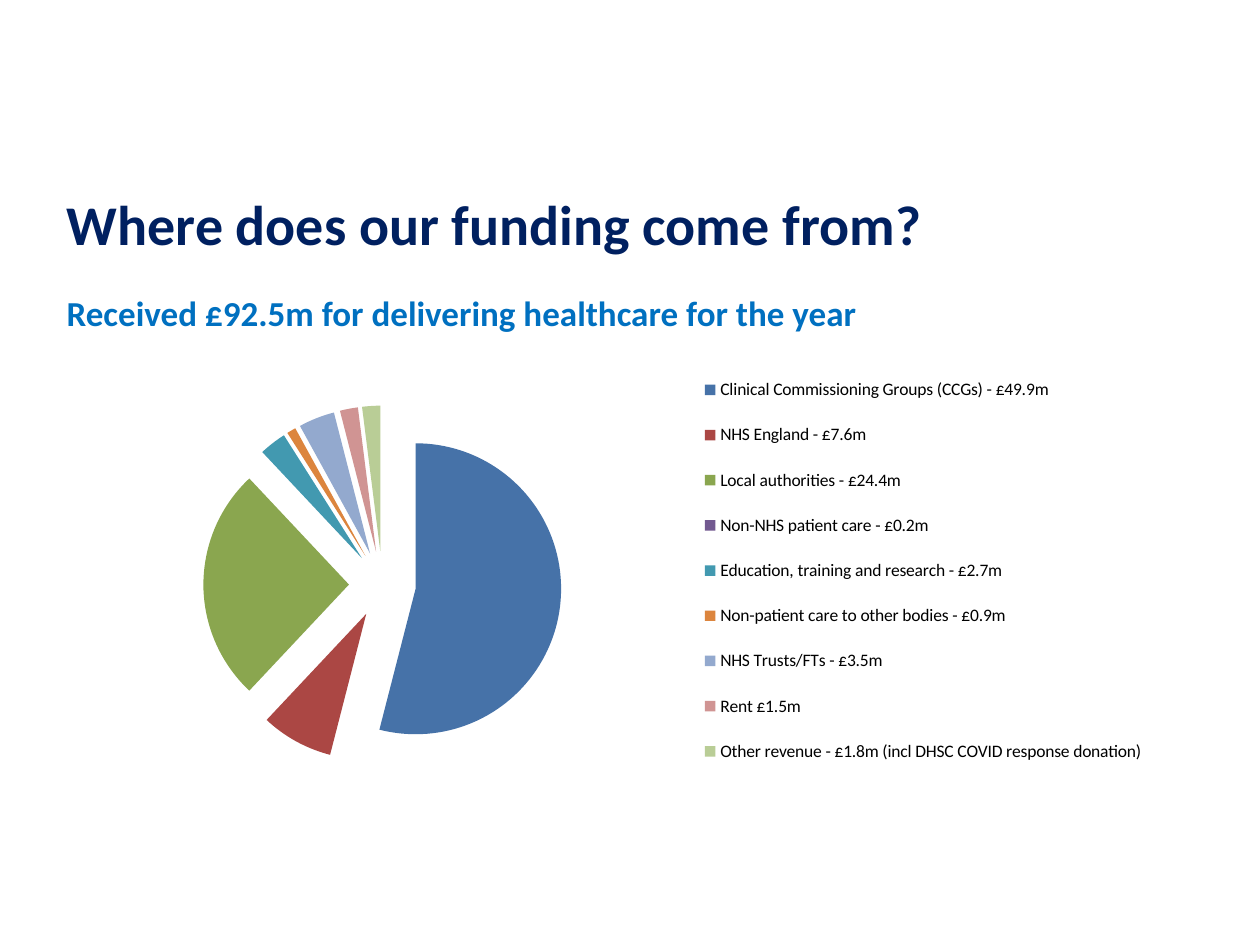
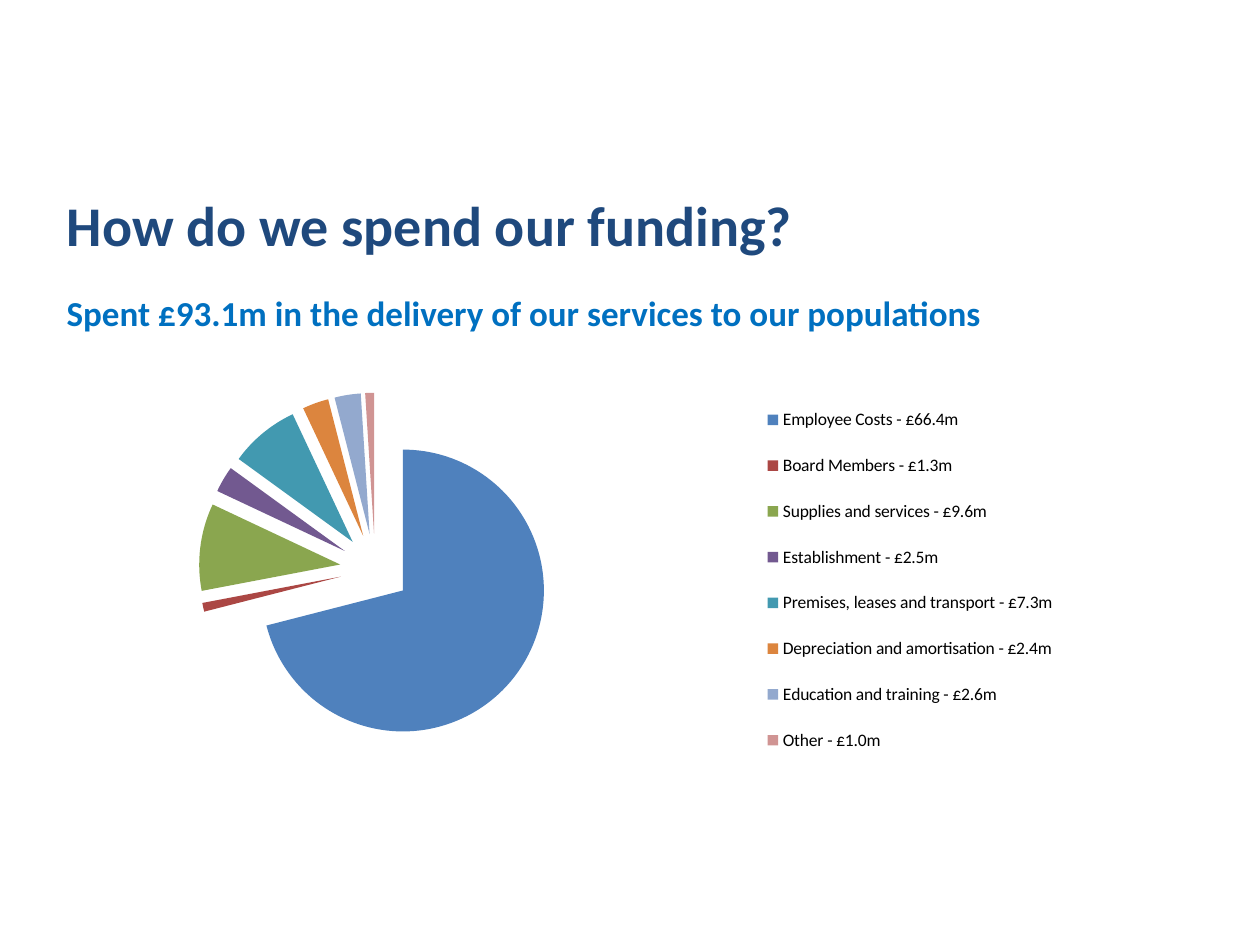
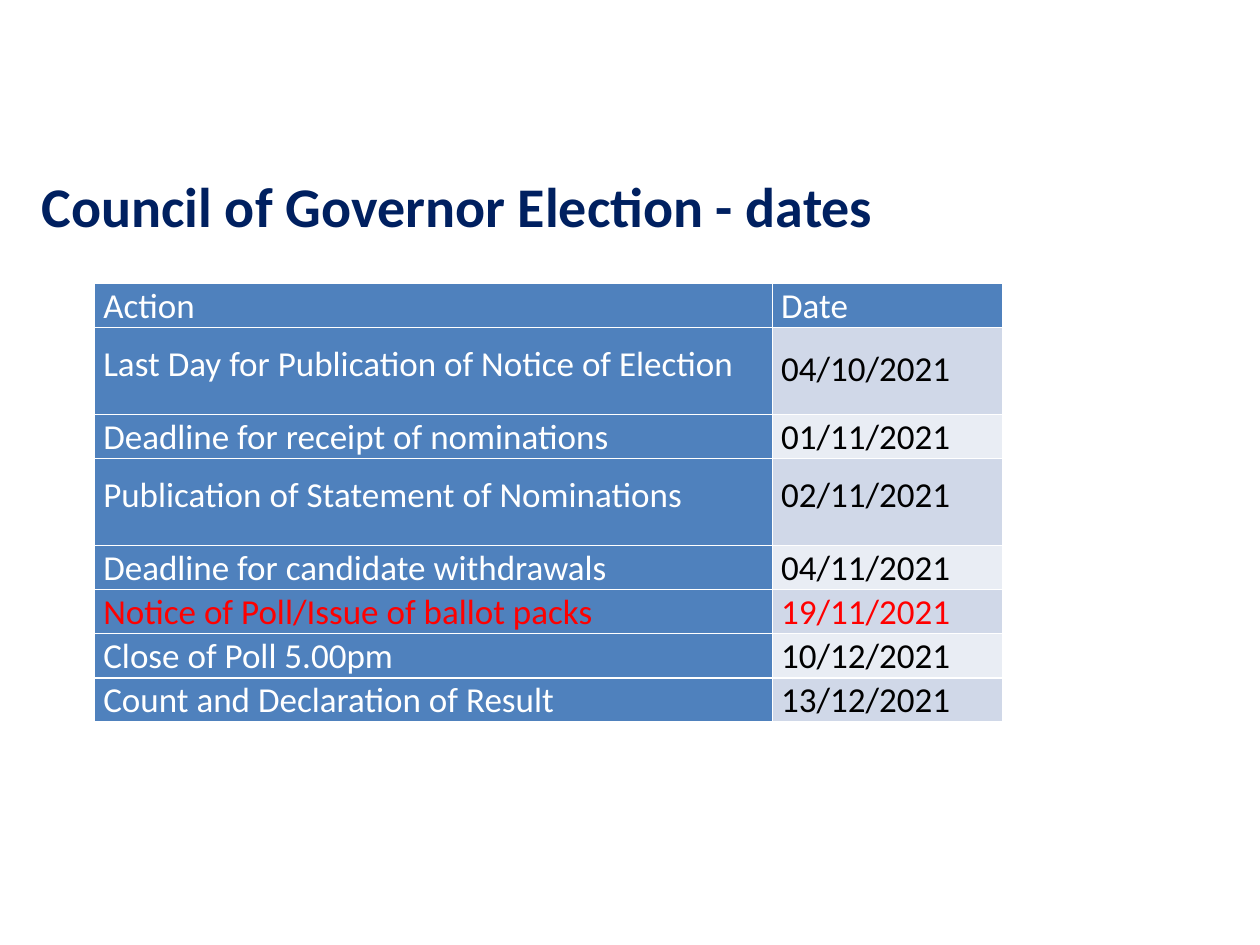
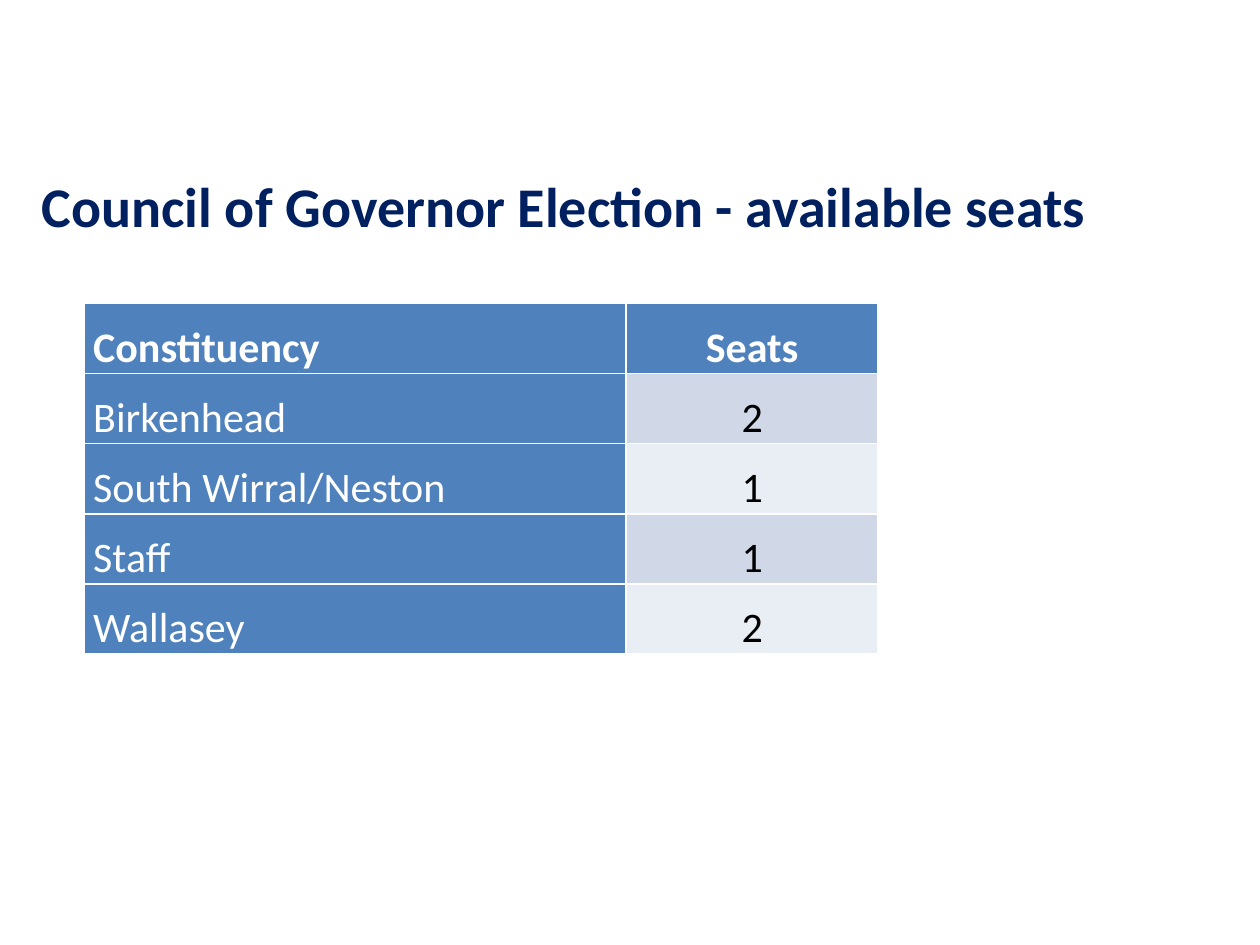
import pptx
import pptx.chart.data
import pptx.dml.color
import pptx.enum.chart
import pptx.enum.text
import pptx.oxml
import pptx.oxml.ns
import pptx.util
from dataclasses import dataclass

Inches = pptx.util.Inches
Pt = pptx.util.Pt
PP_ALIGN = pptx.enum.text.PP_ALIGN
MSO_ANCHOR = pptx.enum.text.MSO_ANCHOR


@dataclass(frozen=True)
class Theme:
    font: str = "Calibri"
    navy: str = "002060"
    slate: str = "1F497D"
    sky: str = "0070C0"
    blue: str = "4F81BD"
    band_dark: str = "D0D8E8"
    band_light: str = "E9EDF4"
    white: str = "FFFFFF"
    black: str = "000000"
    red: str = "FF0000"
    slices: tuple = ("4672A8", "AB4744", "8AA64F", "725990", "4299B0",
                     "DC853E", "93A9CE", "D09493", "B9CD96")
    title_size: int = 32
    subtitle_size: int = 20
    legend_size: int = 10


T = Theme()


def rgb(value):
    return pptx.dml.color.RGBColor.from_string(value)


def style_font(font, size, color, bold=False):
    font.name, font.size, font.bold = T.font, Pt(size), bold
    font.color.rgb = rgb(color)


def write(tf, text, size, color, bold=False, align=PP_ALIGN.LEFT, spacing=1.0):
    p = tf.paragraphs[0]
    p.text, p.alignment, p.line_spacing = text, align, spacing
    style_font(p.font, size, color, bold)


# Title and subtitle
def add_title(s, text, box, color=T.navy):
    sp = s.shapes.title
    sp.left, sp.top, sp.width, sp.height = map(Inches, box)
    tf = sp.text_frame
    tf.word_wrap = True
    tf.auto_size = pptx.enum.text.MSO_AUTO_SIZE.NONE
    tf.vertical_anchor = MSO_ANCHOR.TOP
    write(tf, text, T.title_size, color, bold=True)


def add_subtitle(s, text, box):
    tf = s.shapes.add_textbox(*map(Inches, box)).text_frame
    tf.word_wrap = True
    write(tf, text, T.subtitle_size, T.sky, bold=True, spacing=1.5)


# Exploded pie with a legend on the right
def set_layout(parent, index, area, inner=False):
    for old in parent.findall(pptx.oxml.ns.qn("c:layout")):
        parent.remove(old)
    target = '<c:layoutTarget val="inner"/>' if inner else ""
    modes = '<c:xMode val="edge"/><c:yMode val="edge"/>'
    sizes = "".join(f'<c:{k} val="{v}"/>' for k, v in zip("xywh", area))
    parent.insert(index, pptx.oxml.parse_xml(
        f'<c:layout {pptx.oxml.ns.nsdecls("c")}><c:manualLayout>'
        f'{target}{modes}{sizes}</c:manualLayout></c:layout>'))


def add_pie(s, box, shares, colors, explosion, plot_area, legend_area):
    data = pptx.chart.data.CategoryChartData()
    data.categories = list(shares)
    data.add_series("Series 1", list(shares.values()))
    chart = s.shapes.add_chart(pptx.enum.chart.XL_CHART_TYPE.PIE,
                               *map(Inches, box), data).chart
    chart.has_title = False
    style_font(chart.font, T.legend_size, T.black)

    chart.has_legend = True
    legend = chart.legend
    legend.position = pptx.enum.chart.XL_LEGEND_POSITION.RIGHT
    legend.include_in_layout = False
    set_layout(legend._element, 1, legend_area)
    set_layout(chart._chartSpace.chart.plotArea, 0, plot_area, inner=True)

    plot = chart.plots[0]
    plot.vary_by_categories = True
    series = plot.series[0]
    for i in range(len(shares)):
        fill = series.points[i].format.fill
        fill.solid()
        fill.fore_color.rgb = rgb(colors[i])
    series._element.find(pptx.oxml.ns.qn("c:tx")).addnext(pptx.oxml.parse_xml(
        f'<c:explosion {pptx.oxml.ns.nsdecls("c")} val="{explosion}"/>'))


def pie_slide(s, title, title_box, color, subtitle, subtitle_box, **pie):
    add_title(s, title, title_box, color)
    add_subtitle(s, subtitle, subtitle_box)
    add_pie(s, **pie)


# Two-column table with a blue first column and banded second column
def set_borders(cell):
    tcPr = cell._tc.get_or_add_tcPr()
    for side in "LRTB":
        tcPr.append(pptx.oxml.parse_xml(
            f'<a:ln{side} {pptx.oxml.ns.nsdecls("a")} w="{Pt(1)}">'
            f'<a:solidFill><a:srgbClr val="{T.white}"/></a:solidFill>'
            f'</a:ln{side}>'))


def add_table(s, origin, cols, heights, rows, size, bold_header=False,
              align=PP_ALIGN.LEFT, spacing=1.0, red_row=None, lifts=None):
    lifts = lifts or {}
    box = (*origin, sum(cols), sum(heights))
    table = s.shapes.add_table(len(rows), len(cols), *map(Inches, box)).table
    table.first_row = table.horz_banding = False
    for column, width in zip(table.columns, cols):
        column.width = Inches(width)
    for r, (values, height) in enumerate(zip(rows, heights)):
        table.rows[r].height = Inches(height)
        for c, text in enumerate(values):
            cell = table.cell(r, c)
            set_borders(cell)
            blue = r == 0 or c == 0
            band = T.band_dark if r % 2 else T.band_light
            cell.fill.solid()
            cell.fill.fore_color.rgb = rgb(T.blue if blue else band)
            cell.margin_left = cell.margin_right = Inches(0.07)
            cell.margin_top = 0
            cell.margin_bottom = Inches(lifts.get((r, c), 0))
            cell.vertical_anchor = MSO_ANCHOR.BOTTOM
            color = T.white if blue else T.black
            write(cell.text_frame, text, size,
                  T.red if r == red_row else color,
                  bold=bold_header and r == 0,
                  align=align if c else PP_ALIGN.LEFT, spacing=spacing)


def table_slide(s, title, title_box, **table):
    add_title(s, title, title_box)
    add_table(s, **table)


# Content: shares are whole percentages of the year's total
FUNDING = {
    "Clinical Commissioning Groups (CCGs) - £49.9m": 54,
    "NHS England - £7.6m": 8,
    "Local authorities - £24.4m": 26,
    "Non-NHS patient care - £0.2m": 0,
    "Education, training and research - £2.7m": 3,
    "Non-patient care to other bodies - £0.9m": 1,
    "NHS Trusts/FTs - £3.5m": 4,
    "Rent £1.5m": 2,
    "Other revenue - £1.8m (incl DHSC COVID response donation)": 2,
}
SPENDING = {
    "Employee Costs - £66.4m": 71,
    "Board Members - £1.3m": 1,
    "Supplies and services - £9.6m": 10,
    "Establishment - £2.5m": 3,
    "Premises, leases and transport - £7.3m": 8,
    "Depreciation and amortisation - £2.4m": 3,
    "Education and training - £2.6m": 3,
    "Other - £1.0m": 1,
}
DATES = [
    ("Action", "Date"),
    ("Last Day for Publication of Notice of Election", "04/10/2021"),
    ("Deadline for receipt of nominations", "01/11/2021"),
    ("Publication of Statement of Nominations", "02/11/2021"),
    ("Deadline for candidate withdrawals", "04/11/2021"),
    ("Notice of Poll/Issue of ballot packs", "19/11/2021"),
    ("Close of Poll 5.00pm", "10/12/2021"),
    ("Count and Declaration of Result", "13/12/2021"),
]
SEATS = [
    ("Constituency", "Seats"),
    ("Birkenhead", "2"),
    ("South Wirral/Neston", "1"),
    ("Staff", "1"),
    ("Wallasey", "2"),
]


def main():
    prs = pptx.Presentation()
    prs.slide_width, prs.slide_height = Inches(10), Inches(7.5)

    def new_slide():
        return prs.slides.add_slide(prs.slide_layouts[5])

    pie_slide(new_slide(),
              "Where does our funding come from?", (0.43, 1.45, 9.45, 0.64), T.navy,
              "Received £92.5m for delivering healthcare for the year",
              (0.43, 2.1, 9.29, 1.47),
              box=(0.59, 2.74, 8.58, 3.69), shares=FUNDING, colors=T.slices,
              explosion=23, plot_area=(0, 0.13, 0.57, 0.77),
              legend_area=(0.57, 0.02, 0.43, 0.93))
    pie_slide(new_slide(),
              "How do we spend our funding?", (0.43, 1.46, 9.45, 0.64), T.slate,
              "Spent £93.1m in the delivery of our services to our populations",
              (0.43, 2.1, 9.29, 1.62),
              box=(0.51, 2.87, 8.66, 3.54), shares=SPENDING,
              colors=(T.blue, *T.slices[1:]),
              explosion=25, plot_area=(0, 0.07, 0.57, 0.79),
              legend_area=(0.62, 0.05, 0.31, 0.88))

    # The two tall rows hold their text above the bottom edge
    lifts = {(1, 0): 0.23, (1, 1): 0.19, (3, 0): 0.23, (3, 1): 0.23}
    table_slide(new_slide(),
                "Council of Governor Election - dates", (0.23, 1.31, 7.13, 0.64),
                origin=(0.75, 2.25), cols=(5.38, 1.83), rows=DATES, size=20,
                heights=[0.69 if (r, 0) in lifts else 0.35
                         for r in range(len(DATES))],
                red_row=5, lifts=lifts)
    table_slide(new_slide(),
                "Council of Governor Election - available seats", (0.23, 1.31, 9, 0.64),
                origin=(0.67, 2.41), cols=(4.3, 2), rows=SEATS, size=24,
                heights=[2.78 / len(SEATS)] * len(SEATS), bold_header=True,
                align=PP_ALIGN.CENTER, spacing=1.07)
    prs.save("out.pptx")


if __name__ == "__main__":
    main()
